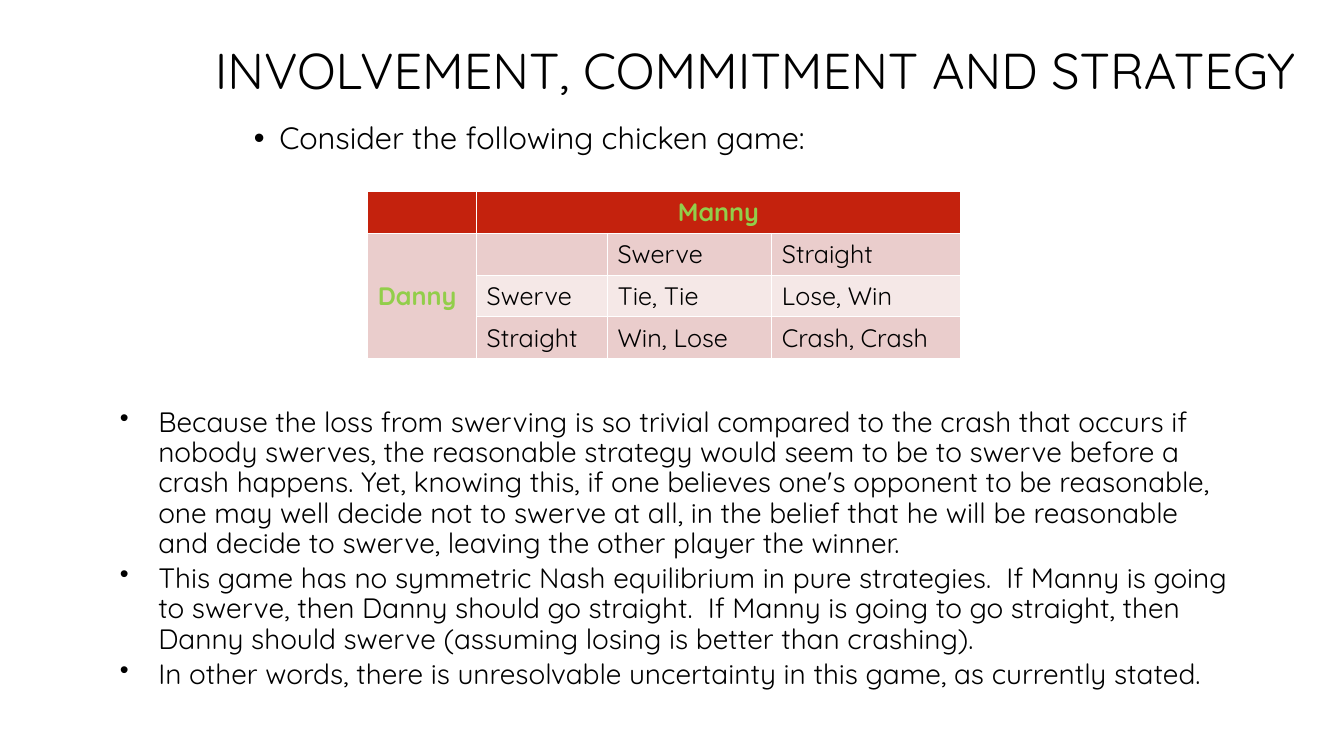
from dataclasses import dataclass
from typing import Any

import pptx
import pptx.dml.color
import pptx.enum.text
import pptx.oxml
import pptx.oxml.ns
import pptx.util

Cm = pptx.util.Cm
Pt = pptx.util.Pt
ALIGN = pptx.enum.text.PP_ALIGN
ANCHOR = pptx.enum.text.MSO_ANCHOR
FIT = pptx.enum.text.MSO_AUTO_SIZE

FONT = "Quicksand"
COLORS = {"text": "000000", "name": "92CE4A", "head": "C4220D",
          "dark": "EACDCC", "light": "F5E8E7"}


@dataclass
class Bullet:
    indent: float
    scale: int = 100


@dataclass
class Block:
    left: float
    top: float
    width: float
    height: float
    size: int
    lines: list[str]
    align: Any = ALIGN.LEFT
    anchor: Any = ANCHOR.TOP
    fit: Any = FIT.NONE
    pitch: float = 1.0
    gap: int = 0
    bullet: Bullet | None = None


def add_run(para: Any, text: str, size: int, color: str = "text",
            bold: bool = False) -> None:
    run = para.add_run()
    run.text = text
    run.font.name = FONT
    run.font.size = Pt(size)
    run.font.bold = bold
    run.font.color.rgb = pptx.dml.color.RGBColor.from_string(COLORS[color])


def add_bullet(para: Any, bullet: Bullet) -> None:
    props = para._p.get_or_add_pPr()
    props.set("marL", str(Cm(bullet.indent)))
    props.set("indent", str(-Cm(bullet.indent)))
    space = pptx.oxml.ns.nsdecls("a")
    for tag in (f'<a:buSzPct {space} val="{bullet.scale * 1000}"/>',
                f'<a:buFont {space} typeface="Arial"/>',
                f'<a:buChar {space} char="•"/>'):
        props.append(pptx.oxml.parse_xml(tag))


def add_block(slide: Any, block: Block) -> None:
    box = slide.shapes.add_textbox(Cm(block.left), Cm(block.top),
                                   Cm(block.width), Cm(block.height))
    frame = box.text_frame
    frame.word_wrap = True
    frame.auto_size = block.fit
    frame.vertical_anchor = block.anchor
    for index, line in enumerate(block.lines):
        para = frame.add_paragraph() if index else frame.paragraphs[0]
        if block.bullet:
            add_bullet(para, block.bullet)
        para.alignment = block.align
        para.line_spacing = block.pitch
        para.space_before = Pt(block.gap if index else 0)
        add_run(para, line, block.size)


def add_game(slide: Any) -> None:
    widths = [2.74, 3.3, 4.14, 4.75]
    high = 1.05
    rows = [["", "Manny", "", ""],
            ["Danny", "", "Swerve", "Straight"],
            ["", "Swerve", "Tie, Tie", "Lose, Win"],
            ["", "Straight", "Win, Lose", "Crash, Crash"]]
    fills = ["head", "dark", "light", "dark"]
    table = slide.shapes.add_table(len(rows), len(widths), Cm(9.27), Cm(4.83),
                                   Cm(sum(widths)), Cm(high * len(rows))).table
    for column, width in zip(table.columns, widths):
        column.width = Cm(width)
    for y, row in enumerate(rows):
        table.rows[y].height = Cm(high)
        for x, text in enumerate(row):
            cell = table.cell(y, x)
            fill = fills[y] if x or not y else "dark"
            cell.fill.solid()
            cell.fill.fore_color.rgb = pptx.dml.color.RGBColor.from_string(COLORS[fill])
            if text:
                player = y == 0 or x == 0
                add_run(cell.text_frame.paragraphs[0], text, 18,
                        "name" if player else "text", player)
    # Player names span their strategies
    manny, danny = table.cell(0, 1), table.cell(1, 0)
    manny.merge(table.cell(0, 3))
    manny.text_frame.paragraphs[0].alignment = ALIGN.CENTER
    danny.merge(table.cell(3, 0))
    danny.vertical_anchor = ANCHOR.MIDDLE


TITLE = Block(3.53, 1.12, 29.36, 1.47, 36, ["INVOLVEMENT, COMMITMENT AND STRATEGY"],
              align=ALIGN.RIGHT, anchor=ANCHOR.MIDDLE, pitch=0.9)
INTRO = Block(6.15, 2.97, 21.59, 1.47, 22, ["Consider the following chicken game:"],
              pitch=0.9, bullet=Bullet(0.64))
NOTES = Block(2.77, 10.06, 28.47, 7.95, 20, [
    "Because the loss from swerving is so trivial compared to the crash that occurs "
    "if nobody swerves, the reasonable strategy would seem to be to swerve before a "
    "crash happens. Yet, knowing this, if one believes one's opponent to be "
    "reasonable, one may well decide not to swerve at all, in the belief that he will "
    "be reasonable and decide to swerve, leaving the other player the winner.",
    "This game has no symmetric Nash equilibrium in pure strategies.  If Manny is "
    "going to swerve, then Danny should go straight.  If Manny is going to go "
    "straight, then Danny should swerve (assuming losing is better than crashing).",
    "In other words, there is unresolvable uncertainty in this game, as currently "
    "stated."], fit=FIT.TEXT_TO_FIT_SHAPE, gap=4, bullet=Bullet(0.97, 90))


def main() -> None:
    deck = pptx.Presentation()
    deck.slide_width, deck.slide_height = Cm(33.87), Cm(19.05)
    slide = deck.slides.add_slide(deck.slide_layouts[6])
    # Heading and lead-in
    add_block(slide, TITLE)
    add_block(slide, INTRO)
    # Payoff table
    add_game(slide)
    # Discussion
    add_block(slide, NOTES)
    deck.save("out.pptx")


if __name__ == "__main__":
    main()
